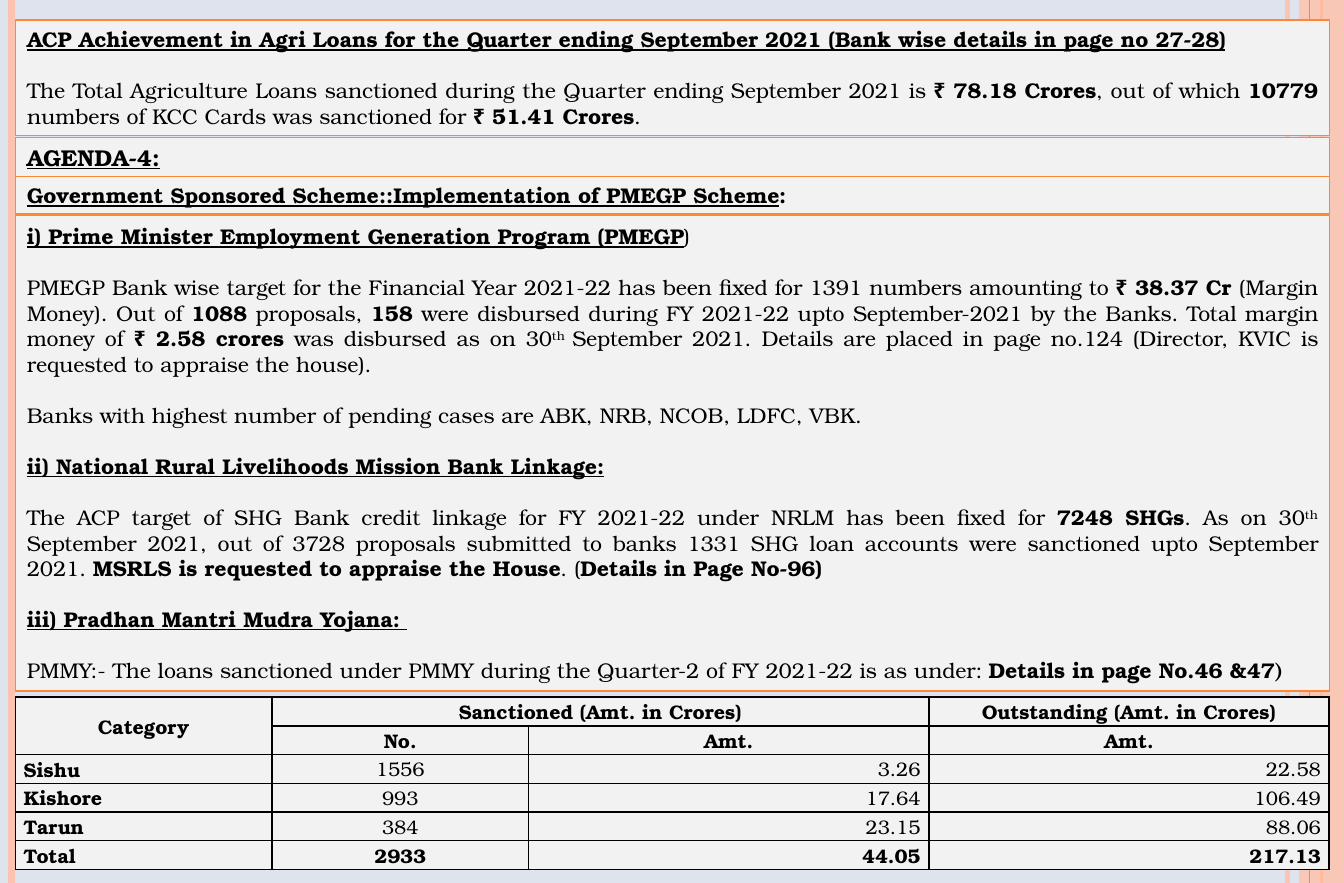
from lxml.etree import SubElement
from pptx import Presentation
from pptx.dml.color import RGBColor
from pptx.enum.shapes import MSO_CONNECTOR as Connector, MSO_SHAPE as Shape
from pptx.enum.text import MSO_ANCHOR as Anchor, MSO_AUTO_SIZE as AutoSize, PP_ALIGN as Align
from pptx.oxml.ns import qn
from pptx.util import Cm, Pt

COLORS = {"background": "DFE3EE", "panel": "F2F2F2", "accent": "FE8637",
          "soft": "FEC3AE", "text": "000000"}
FONT, BRACKET_FONT = "TeX Gyre Bonum", "Cambria"
SLIDE_WIDTH, SLIDE_HEIGHT = 29.01, 19.05
LEFT, WIDTH = 0.33, 28.37
PARAGRAPH_GAP = 15.6

# Run styles: b bold, u underlined, s superscript, c bracket font
STRIPES = [(27.79, "soft", 3, 93), (0.25, "soft", 4.5, 100),
           (28.52, "accent", 1.5, 100), (28.27, "accent", 0.75, 100)]
BAND = (28.04, 0.97, 87)

ACHIEVEMENT = [
    [("ACP Achievement in Agri Loans for the Quarter ending September 2021 "
      "(Bank wise details in page no 27-28)", "bu")],
    [("The Total Agriculture Loans sanctioned during the Quarter ending September 2021 is ", ""),
     ("₹ 78.18 Crores", "b"), (", out of which ", ""), ("10779", "b"),
     (" numbers of KCC Cards was sanctioned for ", ""), ("₹ 51.41 Crores", "b"), (".", "")],
]
AGENDA = [[("AGENDA-4:", "bu")]]
SCHEME = [[("Government Sponsored Scheme::Implementation of PMEGP Scheme", "bu"), (": ", "b")]]
PROGRAMS = [
    [("i) Prime Minister Employment Generation Program (PMEGP", "bu"), (")", "")],
    [("PMEGP Bank wise target for the Financial Year 2021-22 has been fixed for "
      "1391 numbers amounting to ", ""),
     ("₹ 38.37 Cr ", "b"), ("(Margin Money). Out of ", ""), ("1088", "b"),
     (" proposals, ", ""), ("158", "b"),
     (" were disbursed during FY 2021-22 upto September-2021 by the Banks. "
      "Total margin money of ", ""),
     ("₹ 2.58 crores", "b"), (" was disbursed as on 30", ""), ("th ", "s"),
     ("September 2021. Details are placed in page no.124 (Director, KVIC is "
      "requested to appraise the house).", "")],
    [("Banks with highest number of pending cases are ABK, NRB, NCOB, LDFC, VBK.", "")],
    [("ii) National Rural Livelihoods Mission Bank Linkage:", "bu")],
    [("The ACP target of SHG Bank credit linkage for FY 2021-22 under NRLM has been fixed for ", ""),
     ("7248 SHGs", "b"), (". As on 30", ""), ("th", "s"),
     (" September 2021, out of 3728 proposals submitted to banks 1331 SHG loan "
      "accounts were sanctioned upto September 2021. ", ""),
     ("MSRLS is requested to appraise the House", "b"), (". (", ""),
     ("Details in Page No-96)", "b")],
    [("iii) Pradhan Mantri Mudra Yojana: ", "bu")],
    [("PMMY:- The loans sanctioned under PMMY during the Quarter-2 of FY 2021-22 is as under: ", ""),
     ("Details in page No.46 &47", "b"), (")", "bc")],
]
PANELS = [
    (ACHIEVEMENT, 0.43, 2.49, 13, Anchor.MIDDLE),
    (AGENDA, 2.97, 0.86, 14, Anchor.TOP),
    (SCHEME, 3.81, 0.81, 13, Anchor.MIDDLE),
    (PROGRAMS, 4.65, 10.26, 13, Anchor.MIDDLE),
]

LOANS = [
    ("Category", "Sanctioned (Amt. in Crores)", "", "Outstanding (Amt. in Crores)"),
    ("", "No.", "Amt.", "Amt."),
    ("Sishu", "1556", "3.26", "22.58"),
    ("Kishore", "993", "17.64", "106.49"),
    ("Tarun", "384", "23.15", "88.06"),
    ("Total", "2933", "44.05", "217.13"),
]
LOANS_TOP = 15.04
COLUMN_WIDTHS = [5.54, 5.54, 8.64, 8.64]
ROW_HEIGHTS = [0.55, 0.51, 0.51, 0.51, 0.51, 0.56]
MERGES = [((0, 0), (1, 0)), ((0, 1), (0, 2))]
BODY_ALIGNS = [Align.JUSTIFY, Align.CENTER, Align.RIGHT, Align.RIGHT]


def color(name):
    return RGBColor.from_string(COLORS[name])


def paint(fill, name, opacity=100):
    fill.solid()
    fill.fore_color.rgb = color(name)
    if opacity < 100:
        for element in fill.fore_color._xFill.iter(qn("a:srgbClr")):
            SubElement(element, qn("a:alpha"), val=str(opacity * 1000))


def add_run(paragraph, text, style, size):
    run = paragraph.add_run()
    run.text = text
    font = run.font
    font.name = BRACKET_FONT if "c" in style else FONT
    font.size = Pt(size)
    font.bold = "b" in style
    font.underline = "u" in style
    font.color.rgb = color("text")
    if "s" in style:
        run._r.get_or_add_rPr().set("baseline", "30000")


def add_stripe(slide, x, name, width, opacity):
    stripe = slide.shapes.add_connector(Connector.STRAIGHT, Cm(x), 0, Cm(x), Cm(SLIDE_HEIGHT))
    paint(stripe.line.fill, name, opacity)
    stripe.line.width = Pt(width)
    SubElement(stripe._element.spPr, qn("a:effectLst"))


def format_panel(panel, paragraphs, top, height, size, anchor):
    panel.left, panel.top, panel.width, panel.height = Cm(LEFT), Cm(top), Cm(WIDTH), Cm(height)
    paint(panel.fill, "panel")
    paint(panel.line.fill, "accent")
    panel.line.width = Pt(0.75)
    frame = panel.text_frame
    frame.word_wrap = True
    frame.auto_size = AutoSize.NONE
    frame.vertical_anchor = anchor
    for index, runs in enumerate(paragraphs):
        paragraph = frame.add_paragraph() if index else frame.paragraphs[0]
        paragraph.alignment = Align.JUSTIFY
        paragraph.space_before = Pt(PARAGRAPH_GAP if index else 0)
        for text, style in runs:
            add_run(paragraph, text, style, size)


def add_borders(cell):
    properties = cell._tc.get_or_add_tcPr()
    for index, side in enumerate(("a:lnL", "a:lnR", "a:lnT", "a:lnB")):
        border = SubElement(properties, qn(side), w=str(Pt(1)))
        fill = SubElement(border, qn("a:solidFill"))
        SubElement(fill, qn("a:srgbClr"), val=COLORS["text"])
        properties.insert(index, border)


def add_loans(slide):
    frame = slide.shapes.add_table(len(LOANS), len(COLUMN_WIDTHS), Cm(LEFT), Cm(LOANS_TOP),
                                   Cm(sum(COLUMN_WIDTHS)), Cm(sum(ROW_HEIGHTS)))
    table = frame.table
    table.first_row = table.horz_banding = False
    for column, width in zip(table.columns, COLUMN_WIDTHS):
        column.width = Cm(width)
    for row, height in zip(table.rows, ROW_HEIGHTS):
        row.height = Cm(height)
    for start, end in MERGES:
        table.cell(*start).merge(table.cell(*end))
    for row, values in enumerate(LOANS):
        for column, value in enumerate(values):
            cell = table.cell(row, column)
            paint(cell.fill, "panel")
            add_borders(cell)
            cell.margin_left = cell.margin_right = Cm(0.18)
            cell.margin_top = cell.margin_bottom = 0
            cell.vertical_anchor = Anchor.MIDDLE
            if value:
                header = row < 2
                bold = header or column == 0 or row == len(LOANS) - 1
                paragraph = cell.text_frame.paragraphs[0]
                paragraph.alignment = Align.CENTER if header else BODY_ALIGNS[column]
                add_run(paragraph, value, "b" if bold else "", 12)


def main():
    presentation = Presentation()
    presentation.slide_width, presentation.slide_height = Cm(SLIDE_WIDTH), Cm(SLIDE_HEIGHT)
    slide = presentation.slides.add_slide(presentation.slide_layouts[5])
    paint(slide.background.fill, "background")
    for stripe in STRIPES:
        add_stripe(slide, *stripe)
    band_left, band_width, band_opacity = BAND
    band = slide.shapes.add_shape(Shape.RECTANGLE, Cm(band_left), 0,
                                  Cm(band_width), Cm(SLIDE_HEIGHT))
    band.shadow.inherit = False
    paint(band.fill, "soft", band_opacity)
    band.line.fill.background()
    add_stripe(slide, *STRIPES[-1])

    title = slide.shapes.title
    title._element.getparent().append(title._element)
    format_panel(title, *PANELS[0])
    for panel in PANELS[1:]:
        box = slide.shapes.add_shape(Shape.RECTANGLE, 0, 0, 0, 0)
        box.shadow.inherit = False
        format_panel(box, *panel)
    add_loans(slide)
    presentation.save("out.pptx")


if __name__ == "__main__":
    main()
